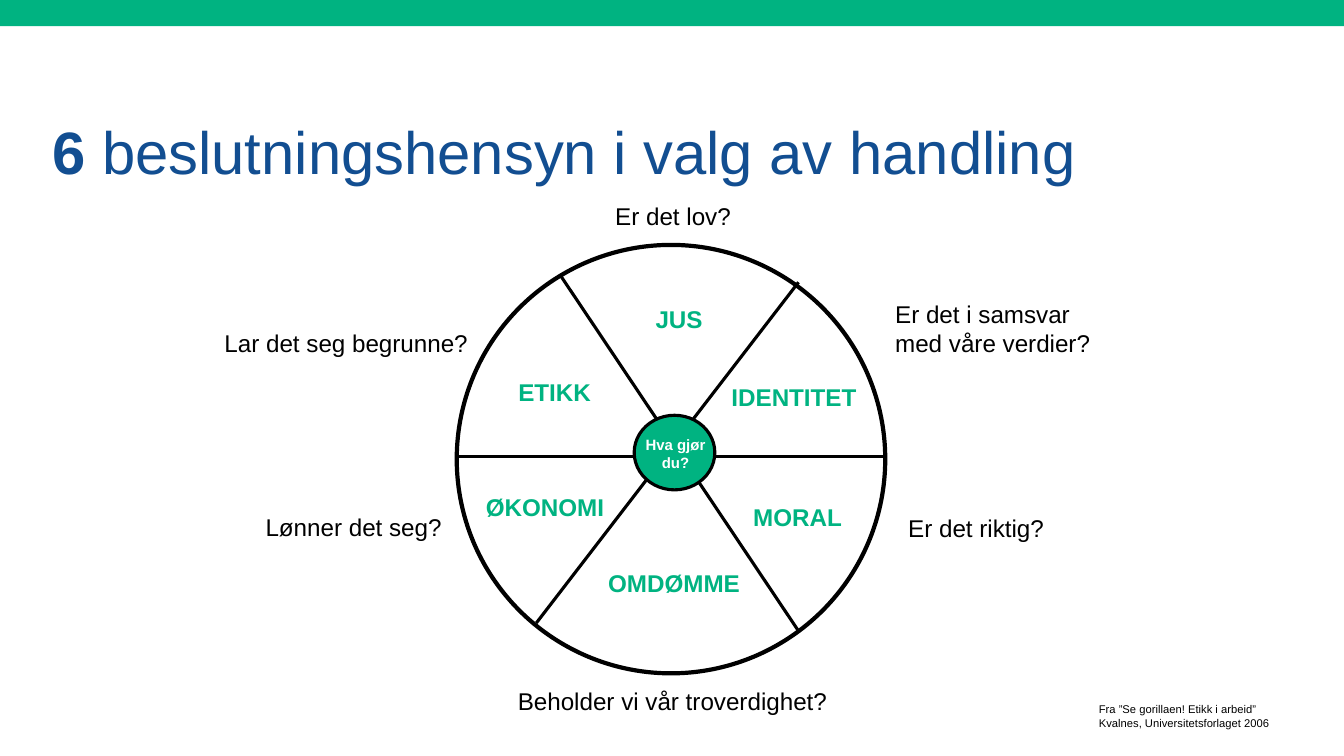
from dataclasses import dataclass

from lxml import etree
from pptx import Presentation
from pptx.dml.color import RGBColor
from pptx.enum import shapes, text
from pptx.oxml import ns
from pptx.util import Inches, Pt

LEFT, CENTER, RIGHT = text.PP_ALIGN.LEFT, text.PP_ALIGN.CENTER, text.PP_ALIGN.RIGHT


@dataclass(frozen=True)
class Theme:
    font: str = "Arial"
    green: RGBColor = RGBColor.from_string("00B381")
    blue: RGBColor = RGBColor.from_string("124E91")
    black: RGBColor = RGBColor.from_string("000000")
    white: RGBColor = RGBColor.from_string("FFFFFF")
    title_size: float = 42.7
    label_size: float = 17.3
    hub_size: float = 10.7
    source_size: float = 8
    rim_width: float = 3
    spoke_width: float = 2.25


class SlideBuilder:
    def __init__(self, slide, theme):
        self.slide = slide
        self.theme = theme

    def shape(self, kind, box, fill=None, line_width=None):
        shape = self.slide.shapes.add_shape(kind, *map(Inches, box))
        shape.shadow.inherit = False
        if fill is None:
            shape.fill.background()
        else:
            shape.fill.solid()
            shape.fill.fore_color.rgb = fill
        if line_width is None:
            shape.line.fill.background()
        else:
            shape.line.color.rgb = self.theme.black
            shape.line.width = Pt(line_width)

    def spoke(self, start, end):
        spoke = self.slide.shapes.add_connector(
            shapes.MSO_CONNECTOR.STRAIGHT, *map(Inches, start + end))
        spoke.line.color.rgb = self.theme.black
        spoke.line.width = Pt(self.theme.spoke_width)
        etree.SubElement(spoke._element.spPr, ns.qn("a:effectLst"))

    def text(self, words, box, size, color, align=LEFT, bold=False,
             anchor=text.MSO_ANCHOR.TOP):
        frame = self.slide.shapes.add_textbox(*map(Inches, box)).text_frame
        frame.word_wrap = True
        frame.vertical_anchor = anchor
        paragraph = frame.paragraphs[0]
        paragraph.text = words
        paragraph.alignment = align
        paragraph.font.name = self.theme.font
        paragraph.font.size = Pt(size)
        paragraph.font.color.rgb = color
        paragraph.font.bold = bold
        return paragraph

    def title(self, number, words, box):
        heading = self.text("", box, self.theme.title_size, self.theme.blue,
                            anchor=text.MSO_ANCHOR.BOTTOM)
        for part, bold in ((number, True), (words, False)):
            run = heading.add_run()
            run.text = part
            run.font.bold = bold

    def consideration(self, words, box):
        self.text(words, box + (0.39,), self.theme.label_size,
                  self.theme.green, CENTER, True)

    def question(self, words, align, box):
        self.text(words, box, self.theme.label_size, self.theme.black, align)


SPOKES = [
    ((4.53, 4.53), (8.78, 4.53)),
    ((5.55, 2.72), (7.92, 6.26)),
    ((5.32, 6.18), (7.92, 2.8)),
]
CONSIDERATIONS = [
    ("JUS", (5.93, 2.97, 1.61)),
    ("IDENTITET", (6.99, 3.74, 1.77)),
    ("MORAL", (7.28, 4.93, 1.26)),
    ("OMDØMME", (5.66, 5.59, 2.05)),
    ("ØKONOMI", (4.58, 4.83, 1.65)),
    ("ETIKK", (4.79, 3.69, 1.42)),
]
QUESTIONS = [
    ("Er det lov?", CENTER, (5.65, 1.95, 2.05, 0.39)),
    ("Er det i samsvar\vmed våre verdier?", LEFT, (8.78, 2.92, 3.79, 0.68)),
    ("Er det riktig?", LEFT, (8.91, 5.04, 2.36, 0.39)),
    ("Beholder vi vår troverdighet?", CENTER, (4.31, 6.76, 4.72, 0.39)),
    ("Lønner det seg?", RIGHT, (2.12, 5.03, 2.36, 0.39)),
    ("Lar det seg begrunne?", RIGHT, (1.81, 3.21, 2.93, 0.39)),
]


def main():
    deck = Presentation()
    deck.slide_width, deck.slide_height = Inches(13.33), Inches(7.5)
    theme = Theme()
    page = SlideBuilder(deck.slides.add_slide(deck.slide_layouts[6]), theme)
    oval = shapes.MSO_SHAPE.OVAL

    page.shape(shapes.MSO_SHAPE.RECTANGLE, (0, 0, 13.33, 0.26), theme.green)
    page.title("6", " beslutningshensyn i valg av handling", (0.42, 0.47, 12.32, 1.43))

    page.shape(oval, (4.53, 2.43, 4.25, 4.25), line_width=theme.rim_width)
    for start, end in SPOKES:
        page.spoke(start, end)
    for words, box in CONSIDERATIONS:
        page.consideration(words, box)
    for words, align, box in QUESTIONS:
        page.question(words, align, box)

    page.shape(oval, (6.29, 4.12, 0.8, 0.74), theme.green, theme.spoke_width)
    page.text("Hva gjør du?", (6.25, 4.27, 0.9, 0.46), theme.hub_size,
              theme.white, CENTER, True)

    source = page.text("Fra ”Se gorillaen! Etikk i arbeid” Kvalnes, Universitetsforlaget 2006",
                       (10.8, 6.91, 2.14, 0.38), theme.source_size, theme.black)
    source.line_spacing = Pt(10)

    deck.save("out.pptx")


if __name__ == "__main__":
    main()
